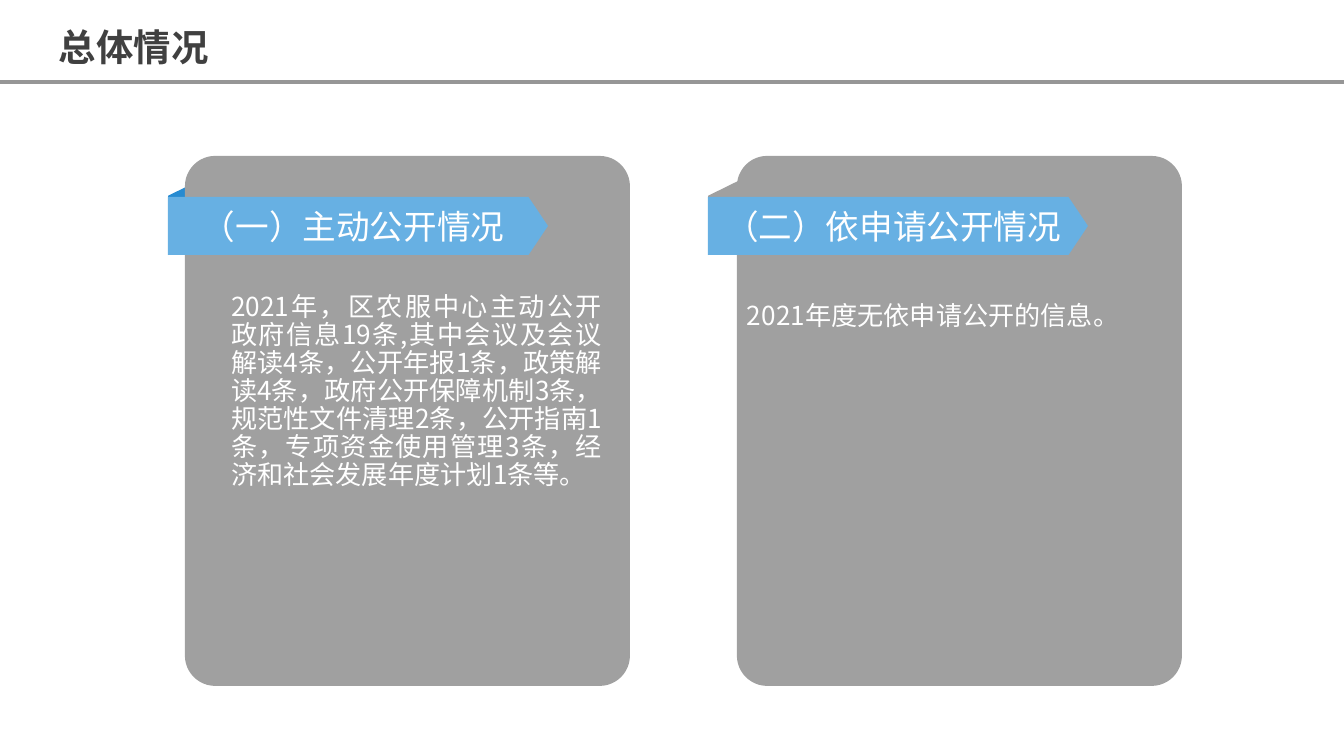
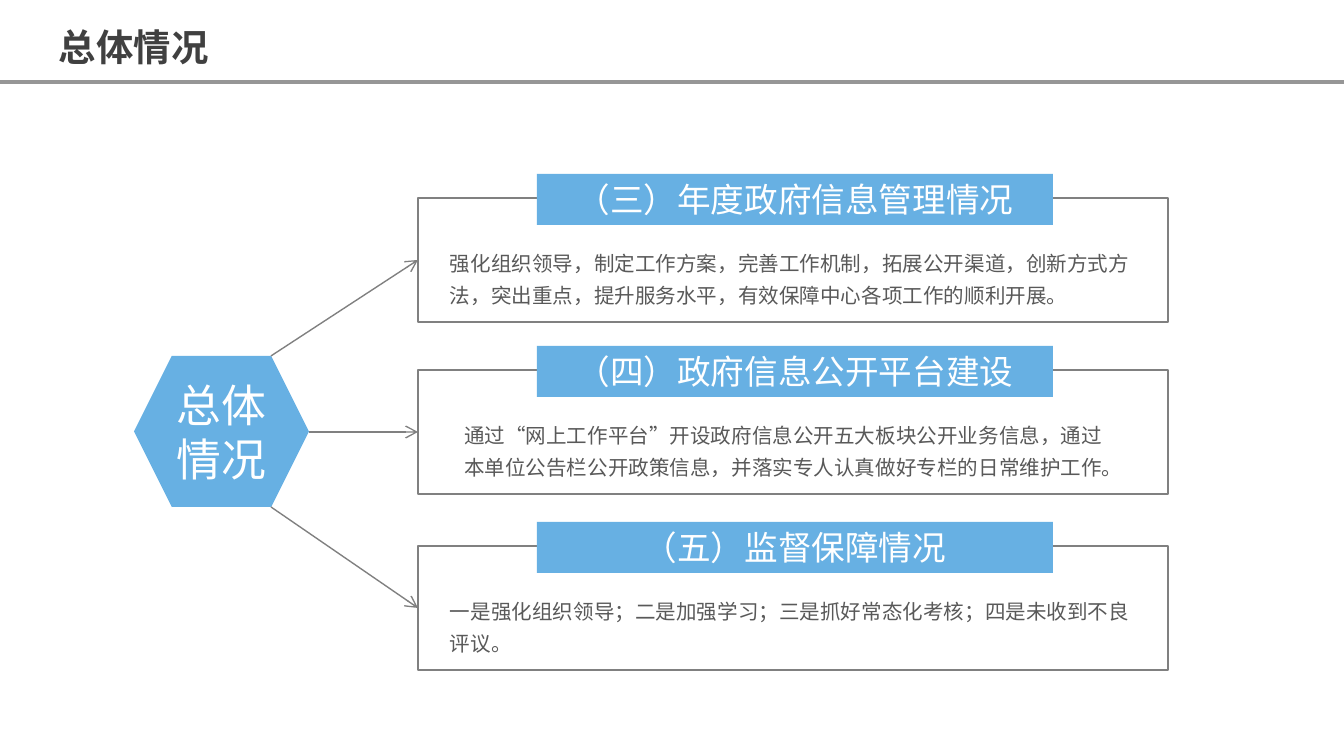
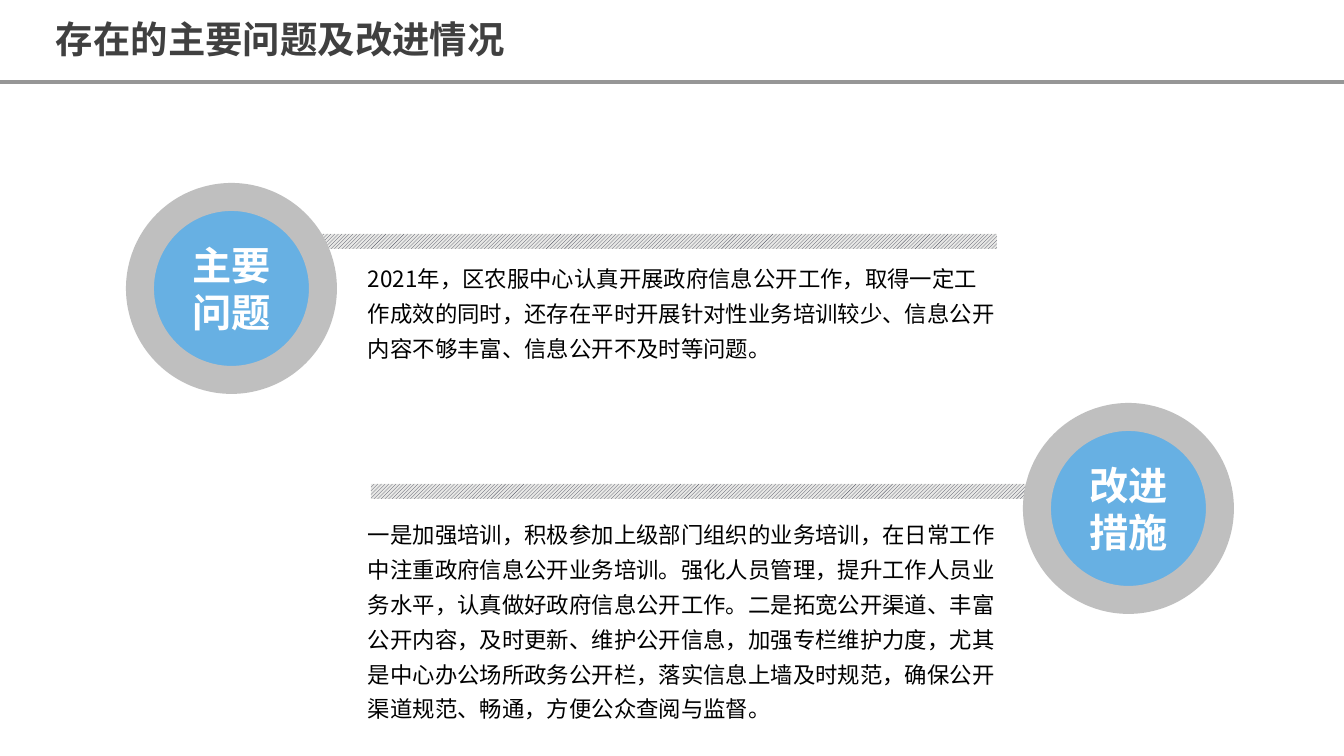
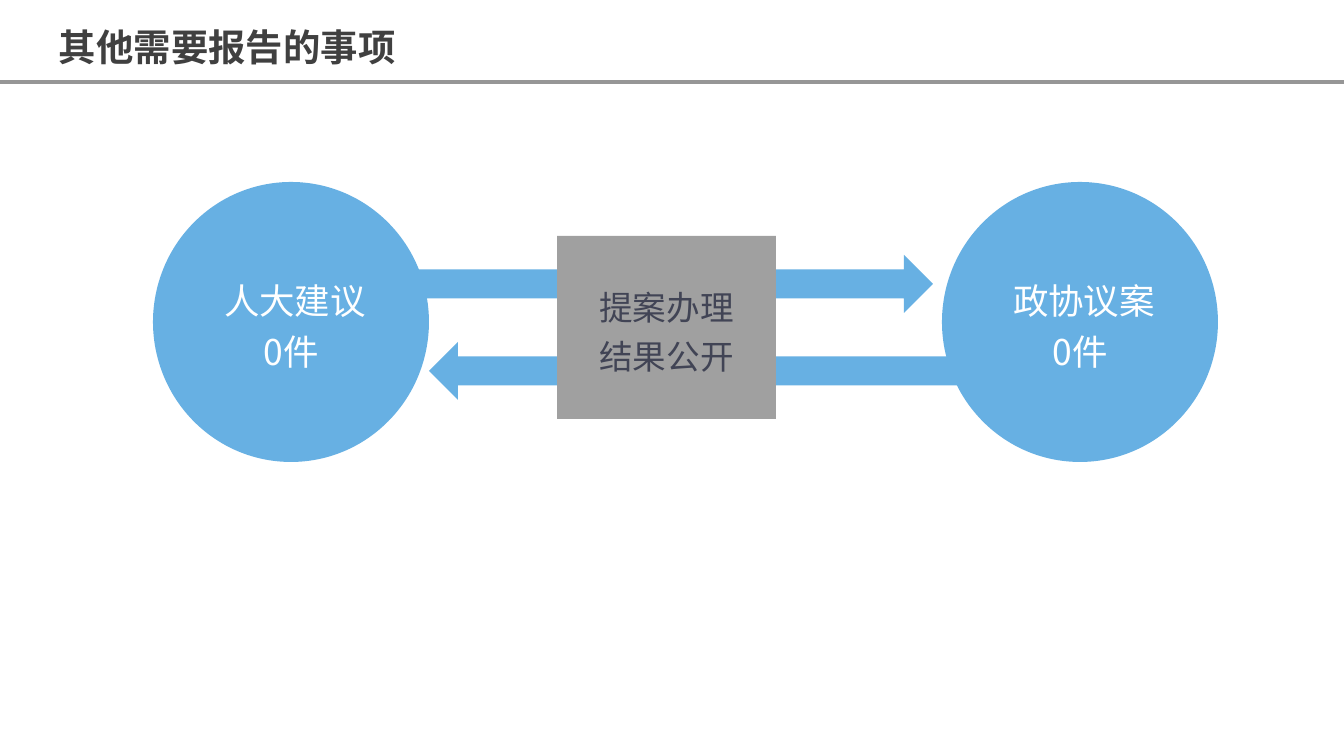
"""Build the four report slides on open government information."""
from dataclasses import dataclass

from pptx import Presentation
from pptx import util as u
from pptx.dml.color import RGBColor
from pptx.enum import dml, shapes, text
from pptx.oxml.ns import qn
from pptx.oxml.xmlchemy import OxmlElement

SCALE = 914400 / 134.4
SHAPE = shapes.MSO_SHAPE
CENTER, LEFT, JUSTIFY = text.PP_ALIGN.CENTER, text.PP_ALIGN.LEFT, text.PP_ALIGN.JUSTIFY


@dataclass(frozen=True)
class Theme:
    """Colours, font and type sizes that the slides share."""
    font: str = "Noto Sans CJK SC"
    blue: str = "67B0E3"
    dark_blue: str = "278BD1"
    gray: str = "A0A0A0"
    ring: str = "BFBFBF"
    rule: str = "969696"
    frame: str = "808080"
    heading: str = "404040"
    body: str = "595959"
    ink: str = "414455"
    pale: str = "E8E8E6"
    white: str = "FFFFFF"
    black: str = "000000"
    title_size: int = 20
    hub_size: int = 24
    badge_size: int = 21
    circle_size: int = 19
    label_size: int = 18
    card_size: int = 14
    note_size: int = 12
    detail_size: int = 11


THEME = Theme()

CARDS = [
    {"label": "（一）主动公开情况", "panel_left": 185, "ribbon_left": 168,
     "fold": THEME.dark_blue, "text_box": (231, 294, 371, 198),
     "text": "2021年，区农服中心主动公开政府信息19条,其中会议及会议解读4条，公开年报1条，"
             "政策解读4条，政府公开保障机制3条，规范性文件清理2条，公开指南1条，"
             "专项资金使用管理3条，经济和社会发展年度计划1条等。"},
    {"label": "（二）依申请公开情况", "panel_left": 737, "ribbon_left": 708,
     "fold": THEME.gray, "text_box": (747, 303, 395, 28),
     "text": "2021年度无依申请公开的信息。"},
]

HUB = "总体情况"
BRANCHES = [
    {"label": "（三）年度政府信息管理情况", "top": 198, "left": 439, "width": 714, "align": LEFT,
     "text": "强化组织领导，制定工作方案，完善工作机制，拓展公开渠道，创新方式方法，"
             "突出重点，提升服务水平，有效保障中心各项工作的顺利开展。"},
    {"label": "（四）政府信息公开平台建设", "top": 370, "left": 450, "width": 667, "align": CENTER,
     "text": "通过“网上工作平台”开设政府信息公开五大板块公开业务信息，"
             "通过本单位公告栏公开政策信息，并落实专人认真做好专栏的日常维护工作。"},
    {"label": "（五）监督保障情况", "top": 546, "left": 439, "width": 703, "align": LEFT,
     "text": "一是强化组织领导；二是加强学习；三是抓好常态化考核；四是未收到不良评议。"},
]

FINDINGS = [
    {"label": "主要问题", "badge": (140, 197), "bar": (306, 234), "text_top": 252, "height": 116,
     "text": "2021年，区农服中心认真开展政府信息公开工作，取得一定工作成效的同时，"
             "还存在平时开展针对性业务培训较少、信息公开内容不够丰富、信息公开不及时等问题。"},
    {"label": "改进措施", "badge": (1037, 417), "bar": (371, 484), "text_top": 508, "height": 222,
     "text": "一是加强培训，积极参加上级部门组织的业务培训，在日常工作中注重政府信息公开业务培训。"
             "强化人员管理，提升工作人员业务水平，认真做好政府信息公开工作。"
             "二是拓宽公开渠道、丰富公开内容，及时更新、维护公开信息，加强专栏维护力度，"
             "尤其是中心办公场所政务公开栏，落实信息上墙及时规范，"
             "确保公开渠道规范、畅通，方便公众查阅与监督。"},
]

ARROWS = [((410, 255, 523, 58), False), ((429, 342, 541, 58), True)]
CIRCLES = [(153, " 人大建议\n0件"), (942, " 政协议案\n0件")]
RESULT = "提案办理\n结果公开"


def px(length):
    return round(length * SCALE)


def color(value):
    return RGBColor.from_string(value)


def write(shape, content, size, ink, align=LEFT, spacing=None, insets=(13, 7), bold=False):
    frame = shape.text_frame
    frame.text = content
    frame.word_wrap = True
    frame.margin_left = frame.margin_right = px(insets[0])
    frame.margin_top = frame.margin_bottom = px(insets[1])
    for paragraph in frame.paragraphs:
        paragraph.alignment = align
        if spacing:
            paragraph.line_spacing = spacing
        for run in paragraph.runs:
            run.font.size = u.Pt(size)
            run.font.bold = bold
            run.font.color.rgb = color(ink)
            run.font.name = THEME.font
            east_asian = OxmlElement("a:ea")
            east_asian.set("typeface", THEME.font)
            run.font._element.append(east_asian)


def add_text(slide, box, content, size, ink, **style):
    shape = slide.shapes.add_textbox(*map(px, box))
    write(shape, content, size, ink, **style)
    shape.text_frame.auto_size = text.MSO_AUTO_SIZE.SHAPE_TO_FIT_TEXT


def add_block(slide, kind, box, fill=None, line=None, width=1, adjust=None, flip=False):
    shape = slide.shapes.add_shape(kind, *map(px, box))
    shape.shadow.inherit = False
    if fill:
        shape.fill.solid()
        shape.fill.fore_color.rgb = color(fill)
    else:
        shape.fill.background()
    if line:
        shape.line.color.rgb = color(line)
        shape.line.width = u.Pt(width)
    else:
        shape.line.fill.background()
    if adjust is not None:
        shape.adjustments[0] = adjust
    if flip:
        shape._element.spPr.find(qn("a:xfrm")).set("flipH", "1")
    return shape


def add_label(slide, kind, box, content, size, ink=THEME.white, spacing=None,
              insets=(11, 5), bold=False, **look):
    shape = add_block(slide, kind, box, **look)
    write(shape, content, size, ink, CENTER, spacing, insets, bold)
    shape.text_frame.vertical_anchor = text.MSO_ANCHOR.MIDDLE


def add_line(slide, start, end, ink, width, arrow=False):
    connector = slide.shapes.add_connector(shapes.MSO_CONNECTOR.STRAIGHT, *map(px, start + end))
    connector.line.color.rgb = color(ink)
    connector.line.width = u.Pt(width)
    if arrow:
        tail = OxmlElement("a:tailEnd")
        tail.set("type", "arrow")
        connector.line._get_or_add_ln().append(tail)
    connector._element.spPr.append(OxmlElement("a:effectLst"))


def new_slide(presentation, title, title_box=(46, 8, 351, 67)):
    slide = presentation.slides.add_slide(presentation.slide_layouts[6])
    add_line(slide, (0, 82), (1344, 82), THEME.rule, 1.75)
    add_text(slide, title_box, title, THEME.title_size, THEME.heading, spacing=1.2, bold=True)
    return slide


def build_cards(presentation):
    slide = new_slide(presentation, "总体情况")
    for card in CARDS:
        ribbon = card["ribbon_left"]
        fold = add_block(slide, SHAPE.FLOWCHART_DATA, (ribbon - 22, 203, 74, 30),
                         card["fold"], flip=True)
        fold.rotation = 270
        add_block(slide, SHAPE.ROUNDED_RECTANGLE, (card["panel_left"], 156, 445, 530),
                  THEME.gray, adjust=0.068)
        add_label(slide, SHAPE.PENTAGON, (ribbon, 197, 380, 58), card["label"], THEME.label_size,
                  insets=(13, 7), fill=THEME.blue, adjust=0.335)
        add_text(slide, card["text_box"], card["text"], THEME.card_size, THEME.white,
                 align=JUSTIFY, spacing=u.Pt(15), insets=(0, 0))


def build_branches(presentation):
    slide = new_slide(presentation, "总体情况")
    frame_left, frame_width, frame_height = 418, 750, 124
    add_label(slide, SHAPE.HEXAGON, (134, 356, 175, 151), HUB, THEME.hub_size, fill=THEME.blue)
    starts = [(271, 356), (309, 432), (271, 507)]
    for branch, start in zip(BRANCHES, starts):
        top = branch["top"]
        add_block(slide, SHAPE.RECTANGLE, (frame_left, top, frame_width, frame_height),
                  line=THEME.frame)
        add_label(slide, SHAPE.RECTANGLE, (537, top - 24, 516, 51), branch["label"],
                  THEME.label_size, fill=THEME.blue)
        add_line(slide, start, (frame_left, top + frame_height // 2), THEME.frame, 0.75, arrow=True)
        add_text(slide, (branch["left"], top + 41, branch["width"], 75), branch["text"],
                 THEME.detail_size, THEME.body, align=branch["align"], spacing=1.3, insets=(11, 5))


def build_findings(presentation):
    slide = new_slide(presentation, "存在的主要问题及改进情况", (43, 0, 501, 67))
    for finding in FINDINGS:
        bar = add_block(slide, SHAPE.RECTANGLE, (*finding["bar"], 691, 15))
        bar.fill.patterned()
        bar.fill.pattern = dml.MSO_PATTERN.LIGHT_UPWARD_DIAGONAL
        bar.fill.fore_color.rgb = color(THEME.ink)
        bar.fill.back_color.rgb = color(THEME.pale)
        add_label(slide, SHAPE.OVAL, (*finding["badge"], 183, 183), finding["label"],
                  THEME.badge_size, insets=(9, 5), bold=True,
                  fill=THEME.blue, line=THEME.ring, width=15)
        add_text(slide, (359, finding["text_top"], 650, finding["height"]), finding["text"],
                 THEME.note_size, THEME.black, spacing=1.3, insets=(9, 5))


def build_exchange(presentation):
    slide = new_slide(presentation, "其他需要报告的事项", (46, 8, 392, 67))
    for box, flip in ARROWS:
        add_block(slide, SHAPE.RIGHT_ARROW, box, THEME.blue, adjust=0.5, flip=flip)
    for left, content in CIRCLES:
        add_label(slide, SHAPE.OVAL, (left, 182, 276, 280), content, THEME.circle_size,
                  spacing=1.2, insets=(15, 7), fill=THEME.blue)
    add_label(slide, SHAPE.RECTANGLE, (557, 236, 219, 183), RESULT, THEME.label_size, THEME.ink,
              spacing=1.2, insets=(15, 7), fill=THEME.gray)


def main():
    presentation = Presentation()
    presentation.slide_width, presentation.slide_height = px(1344), px(756)
    for build in (build_cards, build_branches, build_findings, build_exchange):
        build(presentation)
    presentation.save("out.pptx")


if __name__ == "__main__":
    main()
